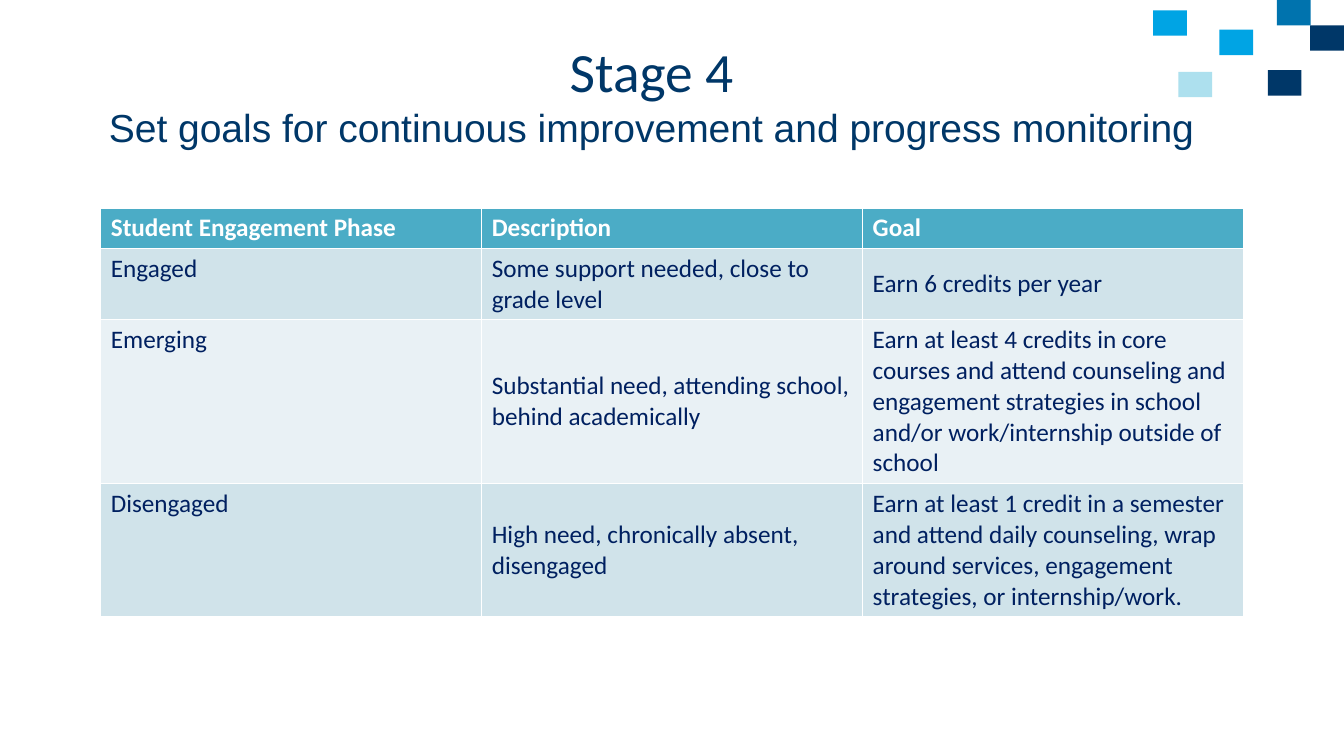
from pptx import Presentation
from pptx.dml.color import RGBColor
from pptx.enum.shapes import MSO_SHAPE
from pptx.enum.text import MSO_ANCHOR, PP_ALIGN
from pptx.util import Cm, Pt

COLORS = {
    "navy": "003768", "blue": "0073AE", "sky": "00A4E4", "pale": "ADE0EE",
    "header": "4BACC6", "band_dark": "D0E3EA", "band_light": "E9F1F5",
    "body": "002060", "white": "FFFFFF",
}


def color(name):
    return RGBColor.from_string(COLORS[name])


def style(run, font_name, size, color_name, bold=False):
    run.font.name = font_name
    run.font.size = Pt(size)
    run.font.bold = bold
    run.font.color.rgb = color(color_name)


prs = Presentation()
prs.slide_width, prs.slide_height = Cm(33.87), Cm(19.05)
slide = prs.slides.add_slide(prs.slide_layouts[6])

# Corner tiles: left, top, colour
tiles = [
    (29.06, 0.26, "sky"), (33.02, 0.64, "navy"), (32.18, 0, "blue"),
    (29.7, 1.81, "pale"), (30.73, 0.75, "sky"), (31.95, 1.77, "navy"),
]
for left, top, fill in tiles:
    tile = slide.shapes.add_shape(MSO_SHAPE.RECTANGLE, Cm(left), Cm(top), Cm(0.85), Cm(0.64))
    tile.shadow.inherit = False
    tile.fill.solid()
    tile.fill.fore_color.rgb = color(fill)
    tile.line.fill.background()

# Heading
heading = slide.shapes.add_textbox(Cm(2.03), Cm(1.14), Cm(28.78), Cm(2.46)).text_frame
heading.word_wrap = True
heading.vertical_anchor = MSO_ANCHOR.MIDDLE
heading.text = "Stage 4\vSet goals for continuous improvement and progress monitoring"
heading.paragraphs[0].alignment = PP_ALIGN.CENTER
stage, subtitle = heading.paragraphs[0].runs
style(stage, "Calibri", 39.6, "navy")
style(subtitle, "Arial", 27.9, "navy")

# Goals by engagement phase
phases = [
    ("Student Engagement Phase", "Description", "Goal"),
    ("Engaged", "Some support needed, close to grade level", "Earn 6 credits per year"),
    ("Emerging", "Substantial need, attending school, behind academically",
     "Earn at least 4 credits in core courses and attend counseling and engagement "
     "strategies in school and/or work/internship outside of school"),
    ("Disengaged", "High need, chronically absent, disengaged",
     "Earn at least 1 credit in a semester and attend daily counseling, wrap around "
     "services, engagement strategies, or internship/work."),
]
row_heights = [1.03, 1.78, 4.14, 3.35]
row_fills = ["header", "band_dark", "band_light", "band_dark"]
goals = slide.shapes.add_table(
    len(phases), 3, Cm(2.54), Cm(5.24), Cm(28.8), Cm(sum(row_heights))).table
for column in goals.columns:
    column.width = Cm(9.6)

for r, phase in enumerate(phases):
    goals.rows[r].height = Cm(row_heights[r])
    is_header = r == 0
    for c, wording in enumerate(phase):
        cell = goals.cell(r, c)
        cell.fill.solid()
        cell.fill.fore_color.rgb = color(row_fills[r])
        cell.vertical_anchor = MSO_ANCHOR.TOP if is_header or c == 0 else MSO_ANCHOR.MIDDLE
        cell.text_frame.text = wording
        style(cell.text_frame.paragraphs[0].runs[0], "Calibri", 18,
              "white" if is_header else "body", is_header)

prs.save("out.pptx")
